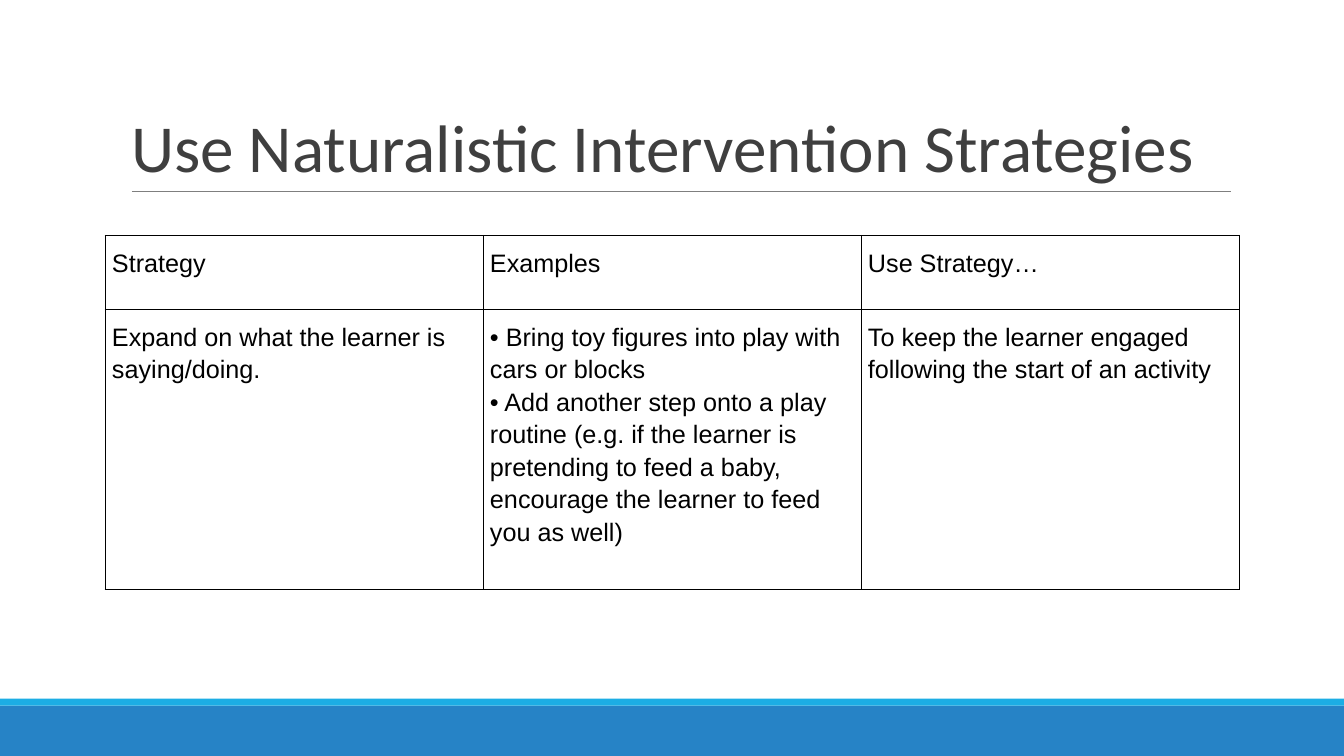
from typing import NamedTuple

from lxml import etree
from pptx import Presentation
from pptx.dml.color import RGBColor
from pptx.enum.shapes import MSO_CONNECTOR, MSO_SHAPE
from pptx.enum.text import MSO_ANCHOR, PP_ALIGN
from pptx.oxml.ns import qn
from pptx.util import Pt

STRAIGHT = MSO_CONNECTOR.STRAIGHT
RECTANGLE = MSO_SHAPE.RECTANGLE
BOTTOM, TOP = MSO_ANCHOR.BOTTOM, MSO_ANCHOR.TOP
LEFT = PP_ALIGN.LEFT

SLIDE_WIDTH, SLIDE_HEIGHT = 960, 540
COLUMN_WIDTH = 270
ROW_HEIGHTS = [53, 200]
BORDER_WIDTH = 0.75
BLACK = "000000"

STRATEGIES = [
    ["Strategy", "Examples", "Use Strategy…"],
    [
        "Expand on what the learner is saying/doing.",
        "• Bring toy figures into play with cars or blocks\n"
        "• Add another step onto a play routine (e.g. if the learner is "
        "pretending to feed a baby, encourage the learner to feed you as well)",
        "To keep the learner engaged following the start of an activity",
    ],
]


class Band(NamedTuple):
    top: float
    height: float
    color: str


FOOTER_BANDS = [Band(504, 36, "2683C6"), Band(499, 5, "1CADE4")]


def rgb(color: str) -> RGBColor:
    return RGBColor.from_string(color)


def format_text(frame, font_name: str, size: float, color: str, spacing: float) -> None:
    for paragraph in frame.paragraphs:
        paragraph.alignment = LEFT
        paragraph.line_spacing = spacing
        for run in paragraph.runs:
            run.font.name = font_name
            run.font.size = Pt(size)
            run.font.bold = False
            run.font.color.rgb = rgb(color)


def add_band(slide, band: Band) -> None:
    bar = slide.shapes.add_shape(
        RECTANGLE, Pt(0), Pt(band.top), Pt(SLIDE_WIDTH), Pt(band.height)
    )
    bar.shadow.inherit = False
    bar.fill.solid()
    bar.fill.fore_color.rgb = rgb(band.color)
    bar.line.fill.background()


def add_title(slide, heading: str) -> None:
    title = slide.shapes.title
    title.left, title.top, title.width, title.height = Pt(86.4), Pt(22.5), Pt(792), Pt(114.3)
    frame = title.text_frame
    frame.text = heading
    frame.word_wrap = True
    frame.vertical_anchor = BOTTOM
    frame.margin_left = frame.margin_right = Pt(7.2)
    frame.margin_top = frame.margin_bottom = Pt(3.6)
    format_text(frame, "Calibri", 48, "3F3F3F", 0.85)


def add_title_rule(slide) -> None:
    rule = slide.shapes.add_connector(STRAIGHT, Pt(94.3), Pt(136.6), Pt(879), Pt(136.6))
    rule.line.color.rgb = rgb("7F7F7F")
    rule.line.width = Pt(BORDER_WIDTH)
    properties = rule._element.find(qn("p:spPr"))
    etree.SubElement(properties, qn("a:effectLst"))


def add_borders(cell) -> None:
    """Outline all four sides; borders must precede the fill in the cell XML."""
    properties = cell._tc.get_or_add_tcPr()
    for position, side in enumerate(("a:lnL", "a:lnR", "a:lnT", "a:lnB")):
        border = etree.Element(qn(side), w=str(Pt(BORDER_WIDTH)))
        fill = etree.SubElement(border, qn("a:solidFill"))
        etree.SubElement(fill, qn("a:srgbClr"), val=BLACK)
        properties.insert(position, border)


def fill_cell(cell, content: str) -> None:
    cell.text_frame.text = content
    cell.vertical_anchor = TOP
    cell.margin_left = cell.margin_right = Pt(5)
    cell.margin_top = cell.margin_bottom = Pt(7.2)
    cell.fill.background()
    add_borders(cell)
    format_text(cell.text_frame, "Arial", 18, BLACK, 1.15)


def add_strategy_table(slide) -> None:
    column_count = len(STRATEGIES[0])
    strategies = slide.shapes.add_table(
        len(STRATEGIES), column_count, Pt(75), Pt(168),
        Pt(COLUMN_WIDTH * column_count), Pt(sum(ROW_HEIGHTS)),
    ).table
    strategies.first_row = False
    strategies.horz_banding = False
    for column in strategies.columns:
        column.width = Pt(COLUMN_WIDTH)
    for row, height, contents in zip(strategies.rows, ROW_HEIGHTS, STRATEGIES):
        row.height = Pt(height)
        for cell, content in zip(row.cells, contents):
            fill_cell(cell, content)


def main() -> None:
    presentation = Presentation()
    presentation.slide_width = Pt(SLIDE_WIDTH)
    presentation.slide_height = Pt(SLIDE_HEIGHT)
    title_only = presentation.slide_layouts.get_by_name("Title Only")
    slide = presentation.slides.add_slide(title_only)
    for band in FOOTER_BANDS:
        add_band(slide, band)
    add_title_rule(slide)
    add_title(slide, "Use Naturalistic Intervention Strategies")
    add_strategy_table(slide)
    presentation.save("out.pptx")


if __name__ == "__main__":
    main()
